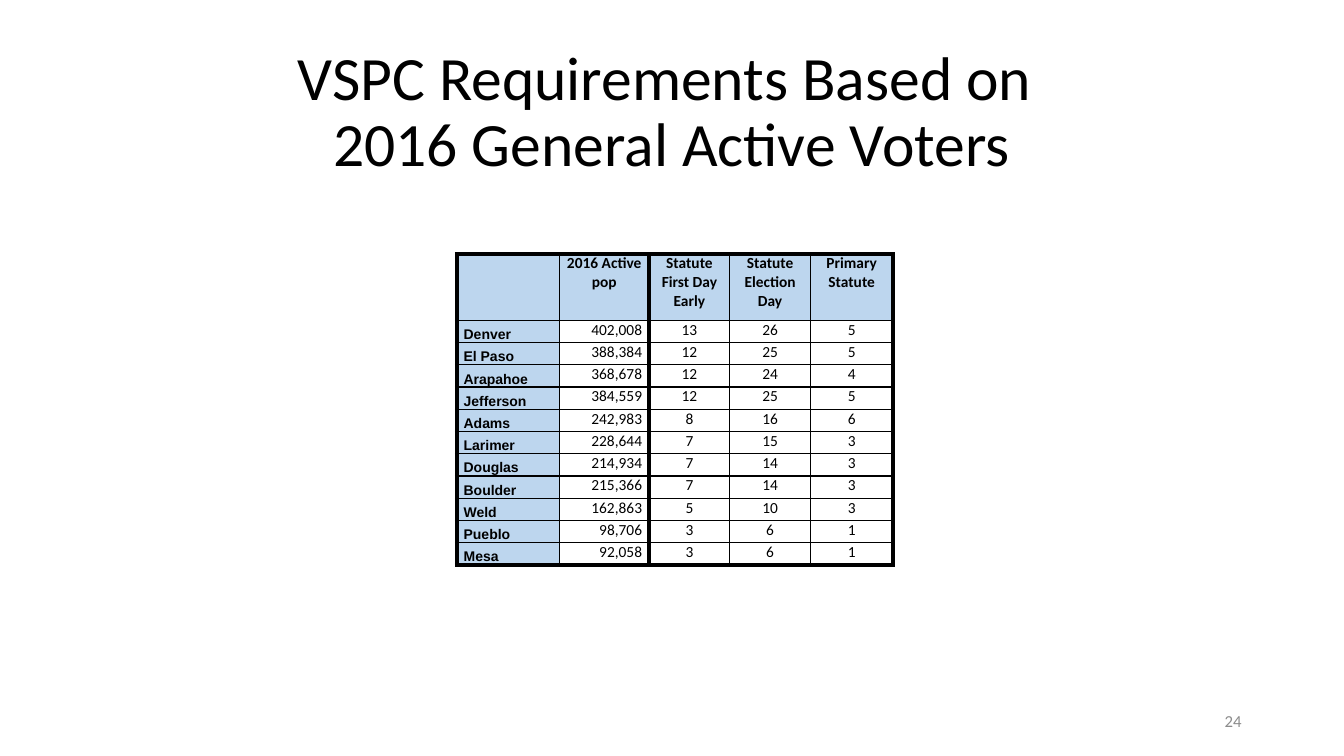
from dataclasses import dataclass
from lxml.etree import SubElement
from pptx import Presentation
from pptx.dml.color import RGBColor
from pptx.enum.text import MSO_ANCHOR as Anchor, PP_ALIGN as Align
from pptx.oxml.ns import qn
from pptx.util import Pt


@dataclass(frozen=True)
class Theme:
    black: str = "000000"
    white: str = "FFFFFF"
    blue: str = "BDD6EE"
    grey: str = "8C8C8C"
    title_size: int = 44
    number_size: int = 12
    cell_size: int = 11
    county_size: int = 10
    body_font: str = "Calibri"
    county_font: str = "Arial"
    thick: int = 3
    thin: int = 1


theme = Theme()


def format_text(frame, size, color, align, font=theme.body_font, bold=False):
    for para in frame.paragraphs:
        para.alignment = align
        for span in para.runs:
            span.font.size = Pt(size)
            span.font.name = font
            span.font.bold = bold
            span.font.color.rgb = RGBColor.from_string(color)


def add_border(cell, side, width):
    line = SubElement(cell._tc.get_or_add_tcPr(), qn(f"a:ln{side}"), w=str(Pt(width)))
    fill = SubElement(line, qn("a:solidFill"))
    SubElement(fill, qn("a:srgbClr"), val=theme.black)


deck = Presentation()
deck.slide_width, deck.slide_height = Pt(960), Pt(540)
page = deck.slides.add_slide(deck.slide_layouts[5])

title = page.shapes.title
title.left, title.top, title.width, title.height = Pt(66), Pt(28.75), Pt(828), Pt(104.4)
title.text_frame.text = "VSPC Requirements Based on \v2016 General Active Voters"
title.text_frame.vertical_anchor = Anchor.MIDDLE
title.text_frame.paragraphs[0].line_spacing = 0.9
format_text(title.text_frame, theme.title_size, theme.black, Align.CENTER)

rows = [
    ("", "2016 Active pop", "Statute First Day Early", "Statute Election Day", "Primary Statute"),
    ("Denver", "402,008", "13", "26", "5"),
    ("El Paso", "388,384", "12", "25", "5"),
    ("Arapahoe", "368,678", "12", "24", "4"),
    ("Jefferson", "384,559", "12", "25", "5"),
    ("Adams", "242,983", "8", "16", "6"),
    ("Larimer", "228,644", "7", "15", "3"),
    ("Douglas", "214,934", "7", "14", "3"),
    ("Boulder", "215,366", "7", "14", "3"),
    ("Weld", "162,863", "5", "10", "3"),
    ("Pueblo", "98,706", "3", "6", "1"),
    ("Mesa", "92,058", "3", "6", "1"),
]
column_widths = [73.4, 64.1, 57.6, 57.6, 59]
header_height, row_height = 47.5, 15.9
last_row, last_column = len(rows) - 1, len(column_widths) - 1

table = page.shapes.add_table(
    len(rows), len(column_widths), Pt(326.2), Pt(181.4),
    Pt(sum(column_widths)), Pt(header_height + last_row * row_height),
).table
table.first_row = table.horz_banding = False
for column, width in zip(table.columns, column_widths):
    column.width = Pt(width)

for row_index, values in enumerate(rows):
    header = row_index == 0
    table.rows[row_index].height = Pt(header_height if header else row_height)
    for column_index, value in enumerate(values):
        county = column_index == 0
        cell = table.cell(row_index, column_index)
        cell.text = value
        cell.margin_left = cell.margin_right = Pt(5)
        cell.margin_top = cell.margin_bottom = Pt(0)
        heavy_sides = {
            "L": column_index in (0, 2),
            "R": column_index in (1, last_column),
            "T": header,
            "B": row_index == last_row,
        }
        for side, heavy in heavy_sides.items():
            add_border(cell, side, theme.thick if heavy else theme.thin)
        cell.fill.solid()
        cell.fill.fore_color.rgb = RGBColor.from_string(
            theme.blue if header or county else theme.white)
        if county and not header:
            cell.vertical_anchor = Anchor.BOTTOM
            format_text(cell.text_frame, theme.county_size, theme.black, Align.LEFT,
                        theme.county_font, True)
        else:
            align = Align.RIGHT if column_index == 1 and not header else Align.CENTER
            format_text(cell.text_frame, theme.cell_size, theme.black, align, bold=header)

number = page.shapes.add_textbox(Pt(678), Pt(500.5), Pt(216), Pt(28.75))
number.text_frame.word_wrap = True
number.text_frame.vertical_anchor = Anchor.MIDDLE
number.text_frame.text = "24"
format_text(number.text_frame, theme.number_size, theme.grey, Align.RIGHT)

deck.save("out.pptx")
